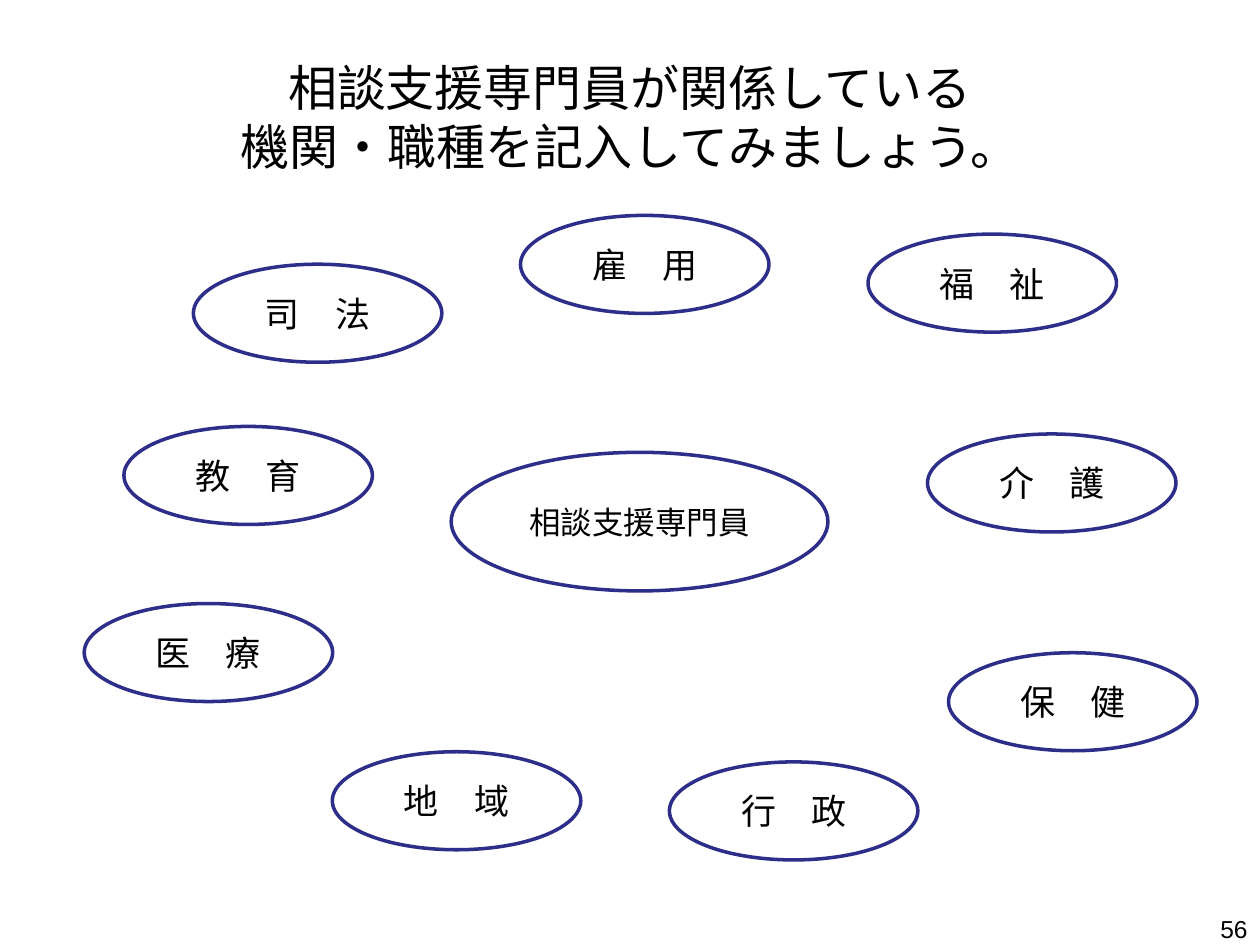
from dataclasses import dataclass

from pptx import Presentation
from pptx.dml.color import RGBColor
from pptx.enum.shapes import MSO_SHAPE as Shape
from pptx.enum.text import MSO_ANCHOR as Anchor, PP_ALIGN as Align
from pptx.util import Pt

COLORS = {"paper": "FFFFFF", "ink": "000000", "outline": "2D2D8A"}
FONT = "Arial"
FIELD_WIDTH, FIELD_HEIGHT = 142, 56


@dataclass(frozen=True)
class Label:
    """Text with its frame and size, all in points."""
    text: str
    left: float
    top: float
    width: float = FIELD_WIDTH
    height: float = FIELD_HEIGHT
    size: float = 20


TITLE = Label("相談支援専門員が関係している\v機関・職種を記入してみましょう。", 36, 21.6, 648, 90, 28)
PAGE_NUMBER = Label("56", 552, 519, 168, 21, 14)
SPECIALIST = Label("相談支援専門員", 257.8, 258.5, 215.3, 79.2, 18)
FIELDS = [
    Label("雇　用", 297.4, 123.1),
    Label("福　祉", 496, 133.8),
    Label("介　護", 530, 248),
    Label("保　健", 542, 373),
    Label("行　政", 382.5, 435.4),
    Label("地　域", 189.9, 429.6),
    Label("医　療", 48.1, 344.9),
    Label("教　育", 70.8, 243.7),
    Label("司　法", 110.5, 151),
]


def color(name: str) -> RGBColor:
    """Look up a named colour."""
    return RGBColor.from_string(COLORS[name])


def frame(label: Label) -> tuple[Pt, Pt, Pt, Pt]:
    """Give the left, top, width and height of a label."""
    return Pt(label.left), Pt(label.top), Pt(label.width), Pt(label.height)


def write(holder, label: Label, align: Align, anchor: Anchor) -> None:
    """Fill a shape or text box with the label's text."""
    body = holder.text_frame
    body.word_wrap = True
    body.vertical_anchor = anchor
    body.text = label.text
    paragraph = body.paragraphs[0]
    paragraph.alignment = align
    paragraph.font.name = FONT
    paragraph.font.size = Pt(label.size)
    paragraph.font.color.rgb = color("ink")


def add_text(slide, label: Label, align: Align, anchor: Anchor) -> None:
    """Place a plain text box."""
    write(slide.shapes.add_textbox(*frame(label)), label, align, anchor)


def add_ellipse(slide, label: Label) -> None:
    """Place an outlined ellipse with centred text."""
    ellipse = slide.shapes.add_shape(Shape.OVAL, *frame(label))
    ellipse.shadow.inherit = False
    ellipse.fill.solid()
    ellipse.fill.fore_color.rgb = color("paper")
    ellipse.line.color.rgb = color("outline")
    ellipse.line.width = Pt(2)
    write(ellipse, label, Align.CENTER, Anchor.MIDDLE)


def main() -> None:
    """Build the slide of fields around the consultation specialist."""
    deck = Presentation()
    deck.slide_width, deck.slide_height = Pt(720), Pt(540)
    slide = deck.slides.add_slide(deck.slide_layouts[6])
    add_text(slide, TITLE, Align.CENTER, Anchor.MIDDLE)
    add_text(slide, PAGE_NUMBER, Align.RIGHT, Anchor.TOP)
    for label in (SPECIALIST, *FIELDS):
        add_ellipse(slide, label)
    deck.save("out.pptx")


if __name__ == "__main__":
    main()
